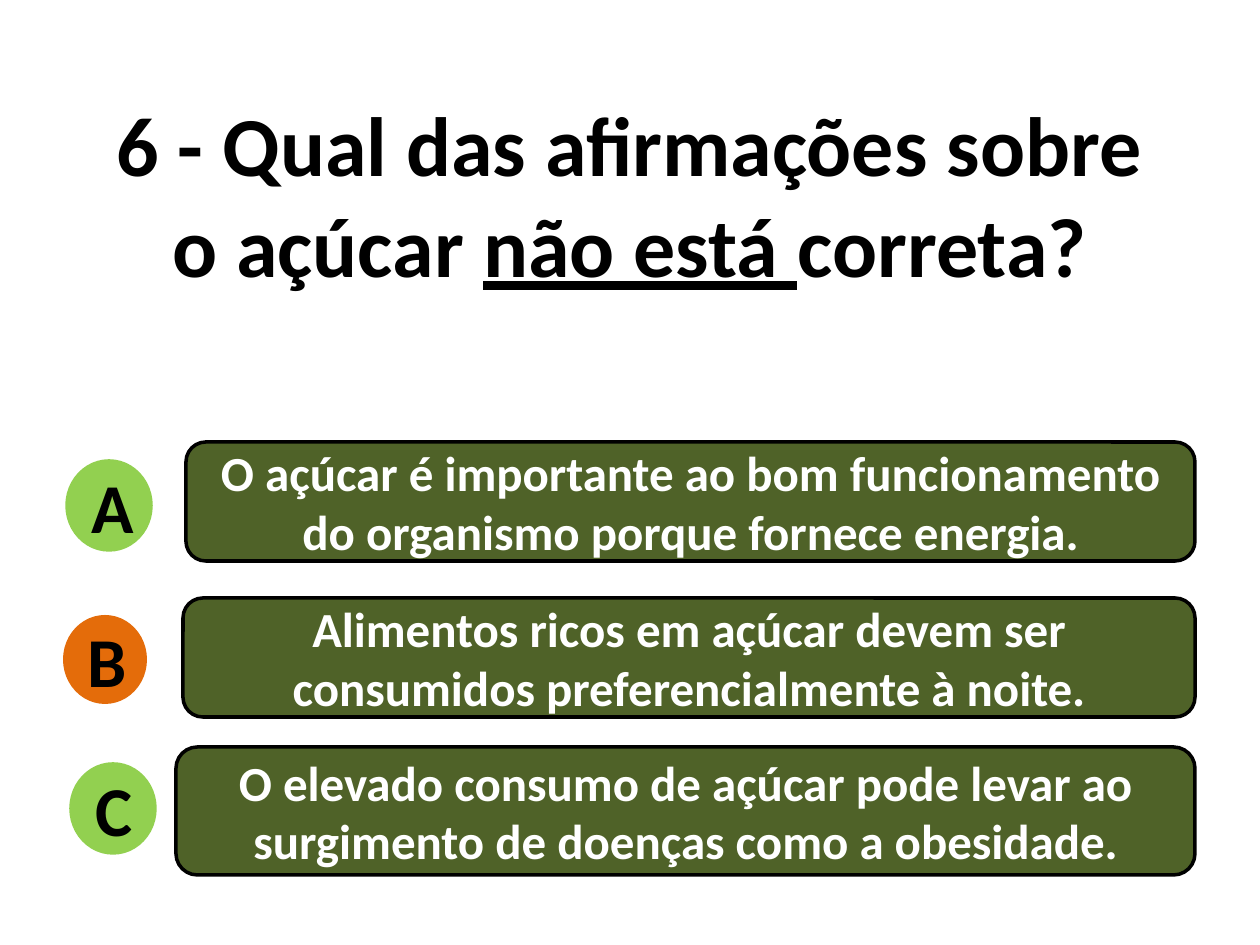
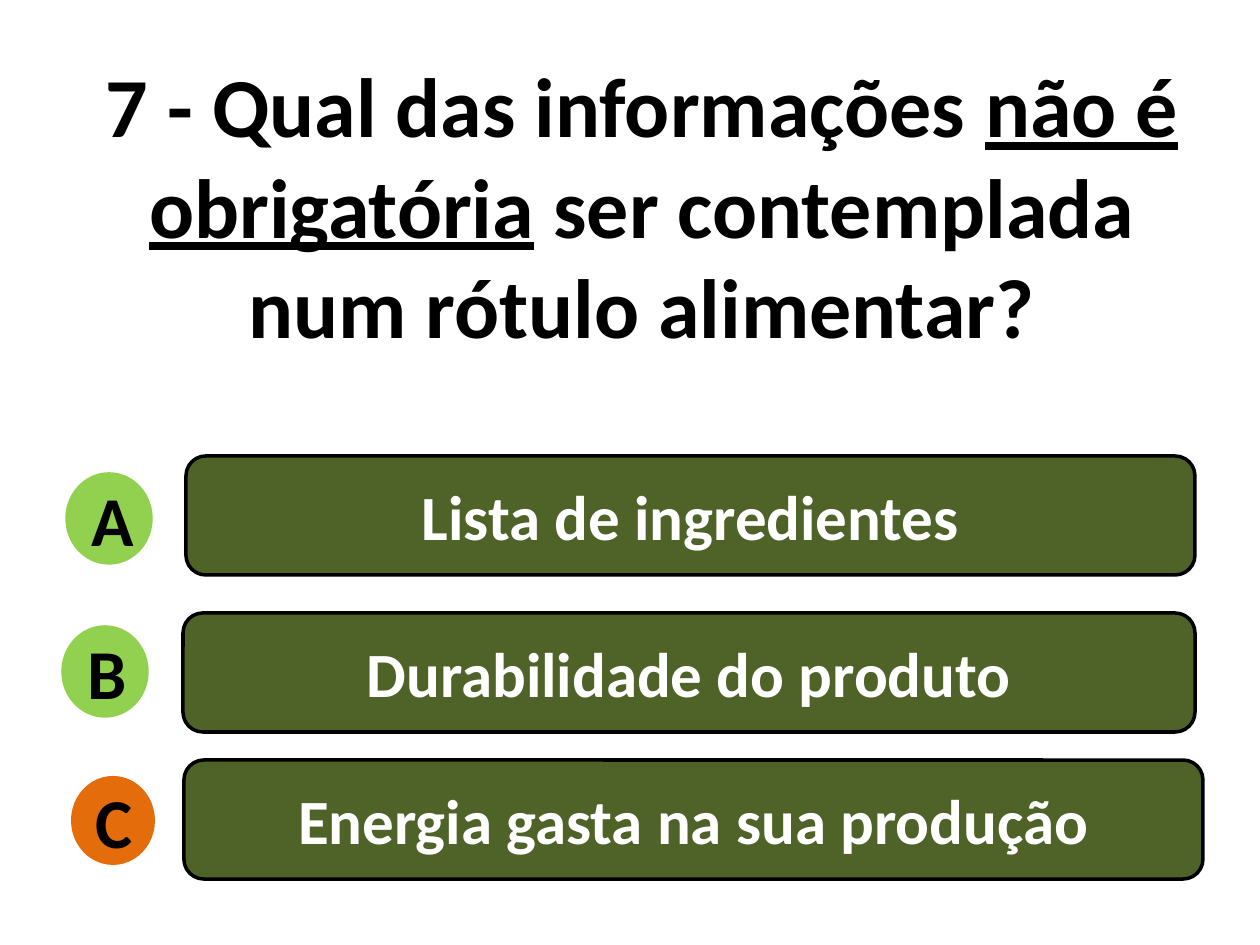
"""Build two quiz slides, each with a question and three lettered answers."""
from pptx import Presentation
from pptx.dml.color import RGBColor
from pptx.enum.shapes import MSO_SHAPE
from pptx.enum.text import MSO_ANCHOR, MSO_AUTO_SIZE, PP_ALIGN
from pptx.util import Pt

BAR = MSO_SHAPE.FLOWCHART_ALTERNATE_PROCESS
OVAL = MSO_SHAPE.OVAL
TOP, MIDDLE = MSO_ANCHOR.TOP, MSO_ANCHOR.MIDDLE
FIXED = MSO_AUTO_SIZE.NONE
CENTER = PP_ALIGN.CENTER

BLACK = RGBColor(0x00, 0x00, 0x00)
WHITE = RGBColor(0xFF, 0xFF, 0xFF)
OLIVE = RGBColor(0x4F, 0x62, 0x28)
LIME = RGBColor(0x92, 0xD0, 0x50)
ORANGE = RGBColor(0xE4, 0x6C, 0x0A)

FONT = "Calibri"
PX = 914400 / 126
LETTERS = "ABC"
OVAL_LEFTS = (67, 63, 71)
OVAL_SIZE = (84, 89)

QUIZ = [
    {
        "title": ("6 - Qual das afirmações sobre o açúcar ", "não está ", "correta?"),
        "box": (84, 86, 1091, 217),
        "size": 28,
        "right": "B",
        "ovals": (461, 615, 764),
        "bars": [
            ("O açúcar é importante ao bom funcionamento do organismo porque fornece energia.",
             (186, 442, 1009, 119)),
            ("Alimentos ricos em açúcar devem ser consumidos preferencialmente à noite.",
             (183, 598, 1012, 119)),
            ("O elevado consumo de açúcar pode levar ao surgimento de doenças como a obesidade.",
             (176, 747, 1019, 128)),
        ],
    },
    {
        "title": ("7 - Qual das informações ", "não é obrigatória",
                  " ser contemplada num rótulo alimentar?"),
        "box": (84, 47, 1116, 420),
        "size": 36,
        "right": "C",
        "ovals": (474, 627, 776),
        "bars": [
            ("Lista de ingredientes", (186, 456, 1009, 119)),
            ("Durabilidade do produto", (183, 613, 1012, 119)),
            ("Energia gasta na sua produção", (184, 760, 1019, 119)),
        ],
    },
]


def style(font, size, color):
    font.name, font.size, font.bold = FONT, Pt(size), True
    font.color.rgb = color


def draw(slide, kind, box, text, size, color, fill, line):
    shape = slide.shapes.add_shape(kind, *(round(n * PX) for n in box))
    shape.shadow.inherit = False
    shape.fill.solid()
    shape.fill.fore_color.rgb = fill
    if line is None:
        shape.line.fill.background()
    else:
        shape.line.color.rgb = line
        shape.line.width = Pt(2)
    frame = shape.text_frame
    frame.text = text
    frame.word_wrap = True
    frame.vertical_anchor = MIDDLE
    frame.paragraphs[0].alignment = CENTER
    style(frame.paragraphs[0].runs[0].font, size, color)


prs = Presentation()
prs.slide_width, prs.slide_height = round(1260 * PX), round(945 * PX)

for quiz in QUIZ:
    slide = prs.slides.add_slide(prs.slide_layouts[5])
    title = slide.shapes.title
    title.left, title.top, title.width, title.height = (round(n * PX) for n in quiz["box"])
    frame = title.text_frame
    frame.auto_size = FIXED
    frame.word_wrap = True
    frame.vertical_anchor = TOP
    para = frame.paragraphs[0]
    para.alignment = CENTER
    for index, part in enumerate(quiz["title"]):
        run = para.add_run()
        run.text = part
        style(run.font, 48, BLACK)
        run.font.underline = index == 1

    for text, box in quiz["bars"]:
        draw(slide, BAR, box, text, quiz["size"], WHITE, OLIVE, BLACK)

    for letter, left, top in zip(LETTERS, OVAL_LEFTS, quiz["ovals"]):
        fill, line = (ORANGE, None) if letter == quiz["right"] else (LIME, LIME)
        draw(slide, OVAL, (left, top, *OVAL_SIZE), letter, 40, BLACK, fill, line)

prs.save("out.pptx")
